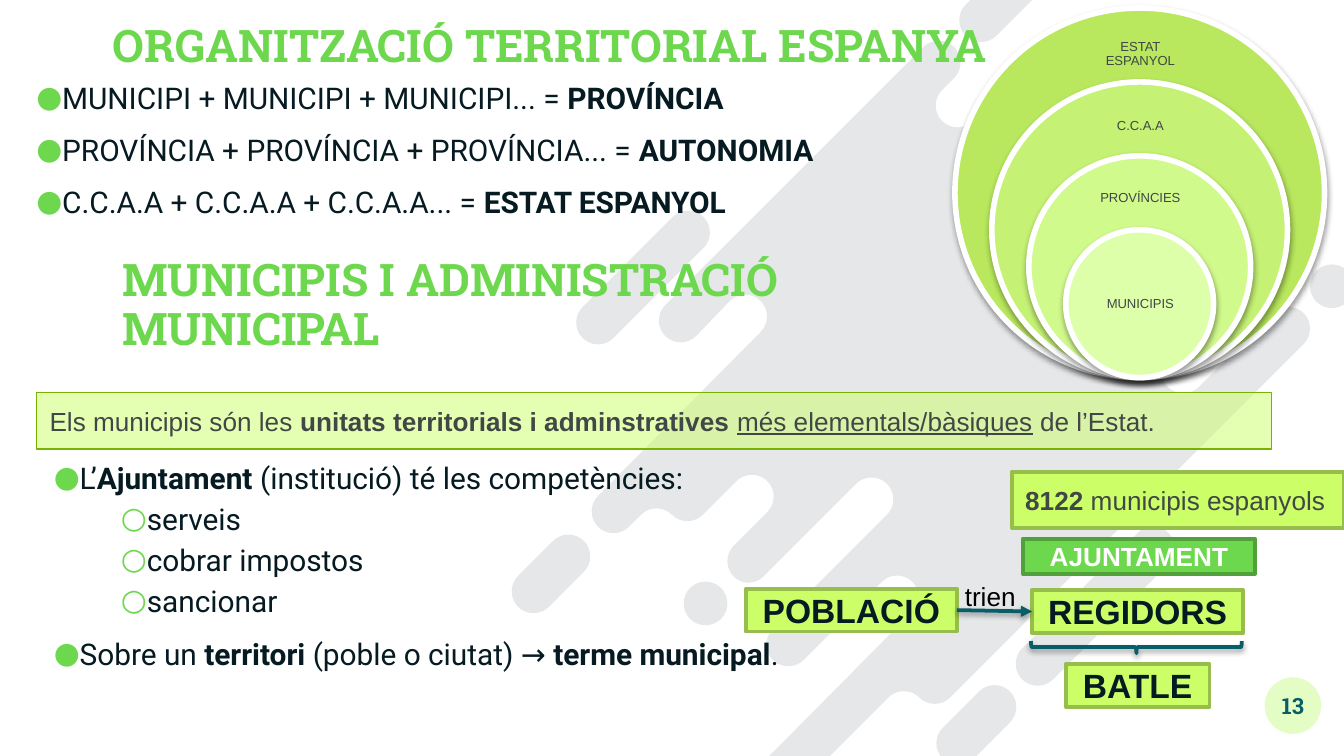
from math import copysign
from lxml import etree
from pptx import Presentation
from pptx import util as u
from pptx.dml.color import RGBColor
from pptx.enum import shapes, text
from pptx.oxml import ns

GREEN, DARK_GREEN = RGBColor(0x6D, 0xD8, 0x4D), RGBColor(0x51, 0xA0, 0x39)
LIME, OLIVE, MOSS = RGBColor(0xCC, 0xFF, 0x67), RGBColor(0x97, 0xBD, 0x4C), RGBColor(0x77, 0xB3, 0)
PALE, TEAL = RGBColor(0xE4, 0xFD, 0xC4), RGBColor(0x07, 0x5E, 0x68)
INK, GRAY = RGBColor(0x06, 0x1A, 0x22), RGBColor(0x40, 0x47, 0x46)
WHITE, BLACK = RGBColor(255, 255, 255), RGBColor(0, 0, 0)
SLAB, BODY, PLAIN = "Roboto Slab", "Roboto", "Arial"
LEFT, CENTER = text.PP_ALIGN.LEFT, text.PP_ALIGN.CENTER
TOP, MIDDLE, BOTTOM = text.MSO_ANCHOR.TOP, text.MSO_ANCHOR.MIDDLE, text.MSO_ANCHOR.BOTTOM
RECT, OVAL = shapes.MSO_SHAPE.RECTANGLE, shapes.MSO_SHAPE.OVAL

# Content: boxes are (left, top, width, height) in inches, runs are (words, style)
TITLES = [("ORGANITZACIÓ TERRITORIAL ESPANYA", (0.84, 0.06, 7.22, 0.48)),
          ("MUNICIPIS I ADMINISTRACIÓ MUNICIPAL", (0.91, 1.85, 6.3, 0.79))]
LISTS = [
    ((0.27, 0.55, 9.01, 1.29), [
        (0, [("MUNICIPI + MUNICIPI + MUNICIPI... = ", ""), ("PROVÍNCIA", "b")]),
        (0, [("PROVÍNCIA + PROVÍNCIA + PROVÍNCIA... = ", ""), ("AUTONOMIA", "b")]),
        (0, [("C.C.A.A + C.C.A.A + C.C.A.A... = ", ""), ("ESTAT ESPANYOL", "b")])]),
    ((0.4, 3.38, 9.01, 1.82), [
        (0, [("L’", ""), ("Ajuntament", "b"), (" (institució) té les competències:", "")]),
        (1, [("serveis", "")]),
        (1, [("cobrar impostos", "")]),
        (1, [("sancionar", "")]),
        (0, [("Sobre un ", ""), ("territori", "b"), (" (poble o ciutat) → ", ""),
             ("terme municipal", "b"), (".", "")])])]
RINGS = [("ESTAT ESPANYOL", RGBColor(0xB9, 0xE7, 0x5D), 0.2, 0.41),
         ("C.C.A.A", RGBColor(0xC5, 0xF2, 0x74), 0.74, 0.4),
         ("PROVÍNCIES", RGBColor(0xD1, 0xFA, 0x8D), 1.29, 0.37),
         ("MUNICIPIS", RGBColor(0xDD, 0xFF, 0xAA), 1.99, 0.55)]
DEFINITION = [("Els municipis són les ", ""), ("unitats territorials i adminstratives ", "b"),
              ("més elementals/bàsiques", "u"), (" de l’Estat.", "")]
# runs, box, fill, border, text colour, size, alignment
BOXES = [
    ([("8122", "b"), (" municipis espanyols", "")], (7.53, 3.51, 2.47, 0.42), LIME, OLIVE, GRAY, 14, LEFT),
    ([("REGIDORS", "b")], (7.68, 4.39, 1.57, 0.32), LIME, OLIVE, INK, 18, CENTER),
    ([("POBLACIÓ", "b")], (5.55, 4.38, 1.57, 0.32), LIME, OLIVE, INK, 18, CENTER),
    ([("BATLE", "b")], (7.93, 4.94, 1.07, 0.32), LIME, OLIVE, INK, 18, CENTER),
    ([("AJUNTAMENT", "b")], (7.61, 4.01, 1.73, 0.26), GREEN, DARK_GREEN, WHITE, 14, CENTER)]

# Backdrop: capsules by end centres, and the corners of the large streak.
# Diagonal steps are straight, level or upright steps are quarter arcs.
CAP = 0.115
CAPSULES = [(9.91, 2.13, 9.91, 2.13), (5.25, 4.49, 5.25, 4.49), (7.13, 5.53, 7.4, 5.26),
            (7.72, 4.94, 8.58, 4.08), (3.97, 4.4, 4.23, 4.14), (4.45, 2.4, 5.12, 1.73),
            (7.3, 0.15, 7.68, -0.23)]
STREAK = [
    (6.87, 0.35), (4.95, 2.27), (4.95, 2.5), (5.18, 2.5), (5.43, 2.24), (5.66, 2.24), (5.66, 2.47),
    (4.45, 3.69), (4.45, 3.92), (4.68, 3.92), (4.77, 3.83), (5, 3.83), (5.23, 3.83), (5.48, 3.58),
    (5.71, 3.58), (5.71, 3.81), (5.46, 4.06), (5.46, 4.29), (5.68, 4.29), (6.37, 3.6), (6.6, 3.6),
    (6.6, 3.83), (5.75, 4.68), (5.75, 4.91), (5.98, 4.91), (6.56, 4.33), (6.79, 4.33), (6.79, 4.55),
    (5.62, 5.73), (5.62, 5.95), (5.85, 5.95), (6.61, 5.19), (6.84, 5.19), (7.07, 5.19), (9.7, 2.56),
    (9.7, 2.33), (9.47, 2.33), (8.92, 2.88), (8.69, 2.88), (8.69, 2.65), (9.04, 2.31), (9.04, 2.08),
    (9.03, 1.86), (9.02, 1.63), (9.02, 1.4), (9.21, 1.22), (9.21, 0.99), (8.98, 0.99), (7.76, 2.21),
    (7.53, 2.21), (7.53, 1.98), (7.82, 1.7), (7.82, 1.47), (7.59, 1.46), (7.37, 1.45), (7.37, 1.22),
    (7.96, 0.64), (7.96, 0.41), (7.73, 0.41), (7.24, 0.9), (7.01, 0.9), (7.01, 0.67), (7.1, 0.58),
    (7.1, 0.35)]


def cm(inches):
    return u.Cm(inches * 2.54)


def sub(parent, tag, **attributes):
    return etree.SubElement(parent, ns.qn("a:" + tag), attributes)


def make_translucent(shape, percent):
    color = shape.fill._xPr.find(ns.qn("a:solidFill"))[0]
    sub(color, "alpha", val=str(percent * 1000))


def cast_shadow(effects):
    shadow = sub(effects, "outerShdw", blurRad=str(u.Pt(3.1)), dist=str(u.Pt(1.6)),
                 dir="5400000", rotWithShape="0")
    sub(sub(shadow, "srgbClr", val="000000"), "alpha", val="38000")


def add_part(kind, box, fill=None, border=None, width=0, shadow=False):
    part = slide.shapes.add_shape(kind, *map(cm, box))
    part.shadow.inherit = False
    if fill is None:
        part.fill.background()
    else:
        part.fill.solid()
        part.fill.fore_color.rgb = fill
    if border is None:
        part.line.fill.background()
    else:
        part.line.color.rgb = border
        part.line.width = u.Pt(width)
    if shadow:
        cast_shadow(part._element.spPr.find(ns.qn("a:effectLst")))
    return part


def set_frame(part, anchor, inset=None, wrap=True):
    frame = part.text_frame
    frame.word_wrap = wrap
    frame.vertical_anchor = anchor
    if inset is not None:
        frame.margin_left = frame.margin_right = frame.margin_top = frame.margin_bottom = cm(inset)
    return frame


def add_textbox(box, anchor, inset=None, wrap=True):
    return set_frame(slide.shapes.add_textbox(*map(cm, box)), anchor, inset, wrap)


def write(paragraph, runs, font, size, color, align=LEFT, spacing=None):
    paragraph.alignment = align
    paragraph.line_spacing = spacing
    for words, style in runs:
        run = paragraph.add_run()
        run.text = words
        run.font.name, run.font.size = font, u.Pt(size)
        run.font.color.rgb = color
        run.font.bold = "b" in style
        run.font.underline = "u" in style


def capsule(x1, y1, x2, y2):
    corners = [(x2 - CAP, y2 - CAP), (x1 - CAP, y1 - CAP), (x1 - CAP, y1 + CAP),
               (x1 + CAP, y1 + CAP), (x2 + CAP, y2 + CAP), (x2 + CAP, y2 - CAP)]
    return list(dict.fromkeys(corners))


def round_corners(path):
    """Turn the level and upright steps of a freeform path into quarter arcs."""
    for step in path:
        if step.tag == ns.qn("a:close"):
            continue
        end = [int(step[0].get(axis)) for axis in "xy"]
        if step.tag == ns.qn("a:moveTo"):
            start, heading = end, (-1, 1)
            continue
        move = [b - a for a, b in zip(start, end)]
        if min(map(abs, move)) > 30:
            heading = [copysign(1, m) for m in move]
        else:
            reach = 0.276 * max(map(abs, move))
            flip = 1 if abs(move[0]) > abs(move[1]) else 0
            leaving = [-h if i == flip else h for i, h in enumerate(heading)]
            step.tag = ns.qn("a:cubicBezTo")
            controls = [[a + reach * h for a, h in zip(start, heading)],
                        [b - reach * h for b, h in zip(end, leaving)]]
            for i, (x, y) in enumerate(controls):
                step.insert(i, etree.Element(ns.qn("a:pt"), x=str(round(x)), y=str(round(y))))
            heading = leaving
        start = end


deck = Presentation()
deck.slide_width, deck.slide_height = cm(10), cm(5.625)
slide = deck.slides.add_slide(deck.slide_layouts[6])

# Backdrop and page number
contours = [[(x * 1000, y * 1000) for x, y in corners]
            for corners in [STREAK] + [capsule(*ends) for ends in CAPSULES]]
pen = slide.shapes.build_freeform(*contours[0][0], scale=cm(1) / 1000)
for i, contour in enumerate(contours):
    if i:
        pen.move_to(*contour[0])
    pen.add_line_segments(contour[1:] + contour[:1])
backdrop = pen.convert_to_shape()
round_corners(next(backdrop._element.iter(ns.qn("a:path"))))
backdrop.shadow.inherit = False
backdrop.fill.solid()
backdrop.fill.fore_color.rgb = INK
make_translucent(backdrop, 10)
backdrop.line.fill.background()
page = add_part(OVAL, (9.41, 5.04, 0.42, 0.42), PALE)
write(set_frame(page, MIDDLE, 0).paragraphs[0], [("13", "b")], SLAB, 12, TEAL, CENTER)

# Titles
for title, box in TITLES:
    write(add_textbox(box, BOTTOM, 0).paragraphs[0], [(title, "b")], SLAB, 24, GREEN, spacing=0.9)

# Nested rings, all resting on the same point
for i, (label, fill, top, height) in enumerate(RINGS):
    size = 2.75 - 0.55 * i
    add_part(OVAL, (8.48 - size / 2, 2.81 - size, size, size), fill, WHITE, 3, shadow=True)
    write(add_textbox((8.1, top, 0.77, height), MIDDLE, 0.05).paragraphs[0],
          [(label, "")], PLAIN, 7, GRAY, CENTER, 0.9)

# Bulleted lists
for box, items in LISTS:
    frame = add_textbox(box, TOP, 0)
    for i, (level, runs) in enumerate(items):
        paragraph = frame.add_paragraph() if i else frame.paragraphs[0]
        write(paragraph, runs, BODY, 16, INK, spacing=1.15)
        paragraph.level = level
        paragraph.space_before = u.Pt(0 if level else 6)
        props = paragraph._p.get_or_add_pPr()
        props.set("marL", str(cm(0.19 + 0.5 * level)))
        props.set("indent", str(-cm(0.19)))
        sub(sub(props, "buClr"), "srgbClr", val=str(GREEN))
        sub(props, "buFont", typeface=BODY)
        sub(props, "buChar", char="●○"[level])

# Definition band and boxes
band = add_part(RECT, (0.27, 2.92, 9.19, 0.42), LIME, MOSS, 0.75)
make_translucent(band, 50)
write(set_frame(band, MIDDLE).paragraphs[0], DEFINITION, PLAIN, 14, GRAY)
for runs, box, fill, border, color, size, align in BOXES:
    frame = set_frame(add_part(RECT, box, fill, border, 2), MIDDLE)
    write(frame.paragraphs[0], runs, PLAIN, size, color, align)

# Arrow from population to councillors, and brace down to the mayor
arrow = slide.shapes.add_connector(shapes.MSO_CONNECTOR.STRAIGHT, *map(cm, (7.12, 4.54, 7.68, 4.55)))
arrow.line.color.rgb = TEAL
arrow.line.width = u.Pt(2)
sub(arrow.line._get_or_add_ln(), "tailEnd", type="triangle")
cast_shadow(sub(arrow._element.spPr, "effectLst"))
brace = add_part(shapes.MSO_SHAPE.RIGHT_BRACE, (8.41, 4.03, 0.09, 1.57), None, TEAL, 2, shadow=True)
brace.rotation = 90
write(add_textbox((7.08, 4.27, 0.58, 0.34), TOP, wrap=False).paragraphs[0],
      [("trien", "")], PLAIN, 14, BLACK)

deck.save("out.pptx")
